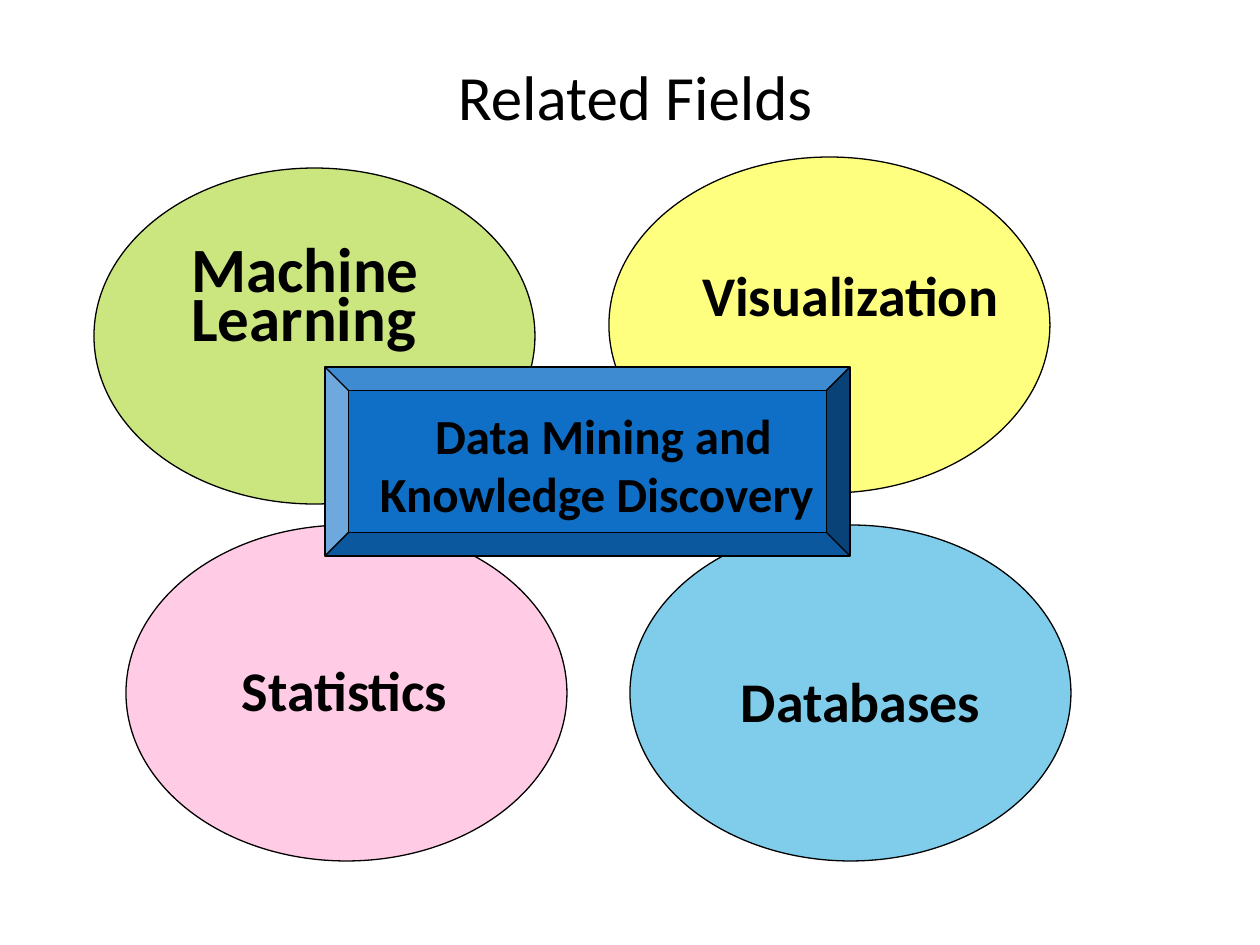
from dataclasses import dataclass
from typing import Optional

from lxml.etree import SubElement
from pptx import Presentation
from pptx.dml.color import RGBColor
from pptx.enum.shapes import MSO_SHAPE as Preset
from pptx.enum.text import MSO_ANCHOR as Anchor, PP_ALIGN as Align
from pptx.oxml.ns import qn
from pptx.util import Emu, Pt

PX = 914400 // 126
FONT = "Calibri"
BLACK = "000000"
FIELD_WIDTH, FIELD_HEIGHT = 441, 336


@dataclass
class Panel:
    preset: Preset
    left: int
    top: int
    width: int
    height: int
    fill: str
    opacity: int = 100


@dataclass
class Label:
    lines: list[str]
    left: int
    top: int
    width: int
    height: int
    size: int
    align: Optional[Align] = Align.RIGHT
    bold: bool = True
    anchor: Anchor = Anchor.TOP
    line_spacing: float = 1.0
    space_before: float = 0


def field(left: int, top: int, fill: str) -> Panel:
    return Panel(Preset.OVAL, left, top, FIELD_WIDTH, FIELD_HEIGHT, fill, 50)


def field_name(name: str, left: int, top: int, width: int) -> Label:
    return Label([name], left, top, width, 73, 32, line_spacing=0.9, space_before=9.6)


PANELS = [
    field(630, 525, "009DD9"),
    field(126, 525, "FF99CC"),
    field(609, 157, "FFFF00"),
    field(94, 168, "99CC00"),
    Panel(Preset.BEVEL, 325, 367, 525, 189, "0F6FC6"),
]

LABELS = [
    Label(["Related Fields"], 63, 32, 1144, 126, 36, Align.CENTER,
          bold=False, anchor=Anchor.MIDDLE),
    field_name("Statistics", 220, 657, 240),
    Label(["Machine", "Learning"], 179, 262, 325, 106, 36, None,
          line_spacing=0.4, space_before=10.8),
    field_name("Databases", 725, 668, 268),
    field_name("Visualization", 672, 262, 339),
    Label(["Data Mining and ", "Knowledge Discovery"], 357, 399, 479, 130, 28,
          Align.CENTER),
]


def colour(hex_value: str) -> RGBColor:
    return RGBColor.from_string(hex_value)


def box(item: Panel | Label) -> list[Emu]:
    return [Emu(n * PX) for n in (item.left, item.top, item.width, item.height)]


def draw_panel(slide, panel: Panel) -> None:
    shape = slide.shapes.add_shape(panel.preset, *box(panel))
    shape.shadow.inherit = False
    shape.fill.solid()
    shape.fill.fore_color.rgb = colour(panel.fill)
    if panel.opacity < 100:
        tint = shape.fill._xPr.find(qn("a:solidFill"))[0]
        SubElement(tint, qn("a:alpha")).set("val", str(panel.opacity * 1000))
    shape.line.color.rgb = colour(BLACK)
    shape.line.width = Pt(0.75)


def draw_label(slide, label: Label) -> None:
    """Add the label's lines as right-to-left paragraphs."""
    frame = slide.shapes.add_textbox(*box(label)).text_frame
    frame.word_wrap = True
    frame.vertical_anchor = label.anchor
    for index, line in enumerate(label.lines):
        paragraph = frame.add_paragraph() if index else frame.paragraphs[0]
        paragraph.alignment = label.align
        paragraph.line_spacing = label.line_spacing
        paragraph.space_before = Pt(label.space_before)
        paragraph._p.get_or_add_pPr().set("rtl", "1")
        run = paragraph.add_run()
        run.text = line
        run.font.name = FONT
        run.font.size = Pt(label.size)
        run.font.bold = label.bold
        run.font.color.rgb = colour(BLACK)


def main() -> None:
    deck = Presentation()
    deck.slide_width, deck.slide_height = Emu(1260 * PX), Emu(945 * PX)
    slide = deck.slides.add_slide(deck.slide_layouts[6])
    for panel in PANELS:
        draw_panel(slide, panel)
    for label in LABELS:
        draw_label(slide, label)
    deck.save("out.pptx")


if __name__ == "__main__":
    main()
